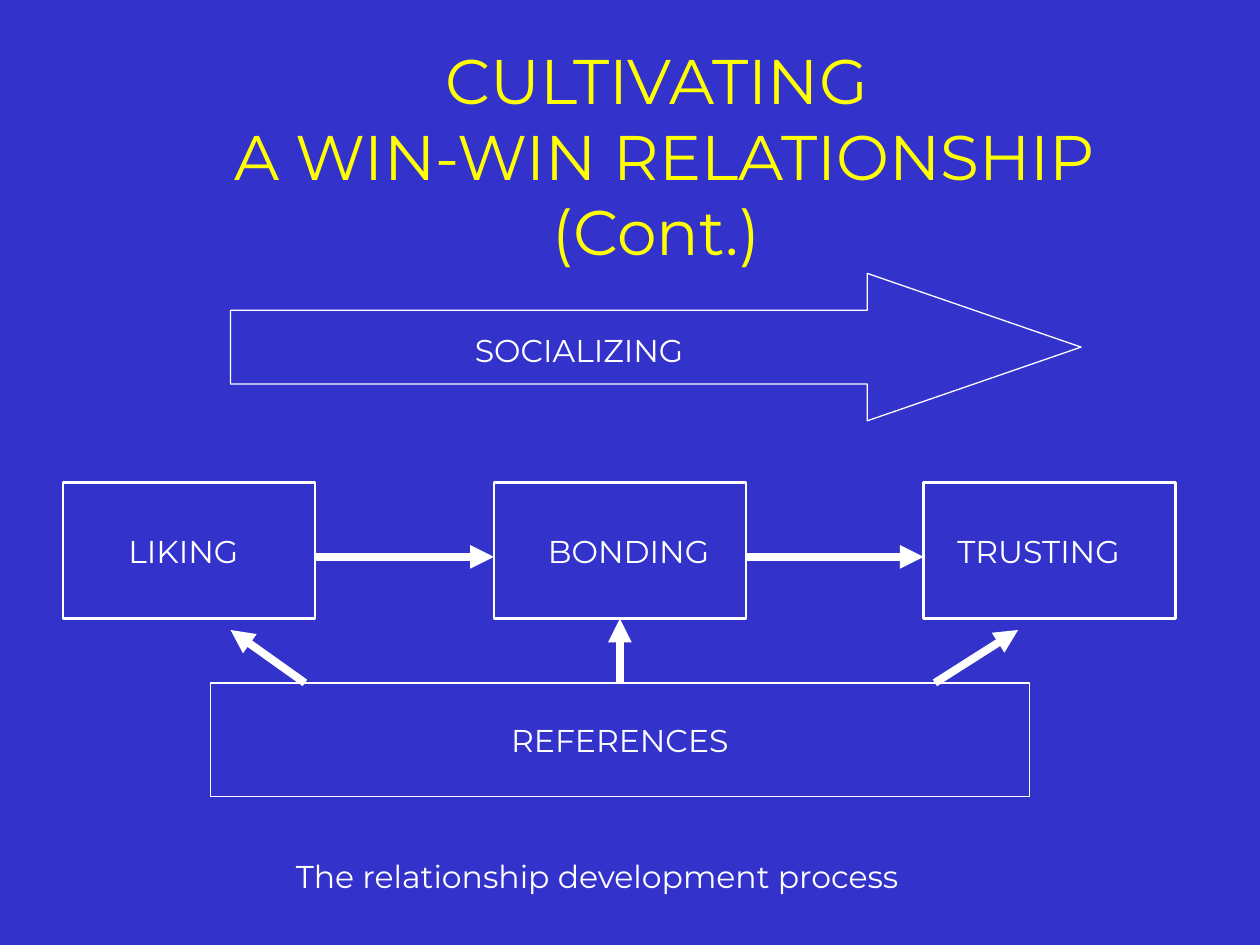
from dataclasses import dataclass

import pptx
import pptx.dml.color
import pptx.enum.shapes
import pptx.enum.text
import pptx.oxml
import pptx.oxml.ns
import pptx.util

Inches = pptx.util.Inches
Pt = pptx.util.Pt
SHAPES = pptx.enum.shapes.MSO_SHAPE
ALIGN = pptx.enum.text.PP_ALIGN
ANCHOR = pptx.enum.text.MSO_ANCHOR

FONT = "Montserrat"
BLUE, WHITE, YELLOW = "3333CC", "FFFFFF", "FFFF00"
STAGE_TOP, STAGE_WIDTH, STAGE_HEIGHT = 3.83, 2, 1.08
LABEL_TOP, LABEL_HEIGHT = 4.17, 0.4
FLOW_Y, REFERENCES_TOP = 4.42, 5.42


@dataclass
class Stage:
    label: str
    left: float
    label_left: float
    label_width: float


STAGES = [
    Stage("LIKING", 0.5, 0.92, 1.19),
    Stage("BONDING", 3.92, 4.25, 1.52),
    Stage("TRUSTING", 7.33, 7.5, 1.66),
]


def colour(value: str):
    return pptx.dml.color.RGBColor.from_string(value)


def write(frame, lines: list[str], size: float = 18, fill: str = WHITE,
          align=ALIGN.LEFT) -> None:
    for index, line in enumerate(lines):
        paragraph = frame.paragraphs[0] if index == 0 else frame.add_paragraph()
        paragraph.alignment = align
        run = paragraph.add_run()
        run.text = line
        run.font.name = FONT
        run.font.size = Pt(size)
        run.font.color.rgb = colour(fill)


def add_label(slide, text: str, left: float, top: float, width: float) -> None:
    box = slide.shapes.add_textbox(
        Inches(left), Inches(top), Inches(width), Inches(LABEL_HEIGHT))
    box.text_frame.word_wrap = True
    write(box.text_frame, [text])


def add_outline(slide, kind, left: float, top: float, width: float,
                height: float, weight: float):
    outline = slide.shapes.add_shape(
        kind, Inches(left), Inches(top), Inches(width), Inches(height))
    outline.shadow.inherit = False
    outline.fill.background()
    outline.line.color.rgb = colour(WHITE)
    outline.line.width = Pt(weight)
    return outline


def add_arrow(slide, start: tuple[float, float], end: tuple[float, float]):
    arrow = slide.shapes.add_connector(
        pptx.enum.shapes.MSO_CONNECTOR.STRAIGHT,
        *(Inches(value) for value in start + end))
    arrow.line.color.rgb = colour(WHITE)
    arrow.line.width = Pt(4.5)
    head = pptx.oxml.ns.qn("a:tailEnd")
    line = arrow.line._get_or_add_ln()
    line.append(line.makeelement(head, {"type": "triangle"}))
    properties = arrow._element.spPr
    properties.append(
        properties.makeelement(pptx.oxml.ns.qn("a:effectLst"), {}))
    return arrow


def main() -> None:
    deck = pptx.Presentation()
    deck.slide_width, deck.slide_height = Inches(10), Inches(7.5)
    slide = deck.slides.add_slide(deck.slide_layouts[6])
    slide.background.fill.solid()
    slide.background.fill.fore_color.rgb = colour(BLUE)

    # Title
    title = slide.shapes.add_textbox(
        Inches(1.34), Inches(0.28), Inches(7.74), Inches(1.42))
    title.text_frame.word_wrap = False
    write(title.text_frame, ["CULTIVATING", " A WIN-WIN RELATIONSHIP (Cont.)"],
          36, YELLOW, ALIGN.CENTER)

    # Stages and the flow between them
    stage_boxes = []
    for stage in STAGES:
        stage_boxes.append(add_outline(
            slide, SHAPES.RECTANGLE, stage.left, STAGE_TOP,
            STAGE_WIDTH, STAGE_HEIGHT, 1.5))
        add_label(slide, stage.label, stage.label_left, LABEL_TOP,
                  stage.label_width)
    for stage, following in zip(STAGES, STAGES[1:]):
        add_arrow(slide, (stage.left + STAGE_WIDTH, FLOW_Y),
                  (following.left, FLOW_Y))

    # Socializing arrow over all stages
    socializing = add_outline(
        slide, SHAPES.RIGHT_ARROW, 1.83, 2.17, 6.75, 1.17, 0.75)
    socializing.adjustments[0] = 0.5
    socializing.adjustments[1] = 1.45
    add_label(slide, "SOCIALIZING", 3.67, 2.58, 2.25)

    # References supporting every stage
    references = add_outline(
        slide, SHAPES.RECTANGLE, 1.67, REFERENCES_TOP, 6.5, 0.9, 0.75)
    references.text_frame.vertical_anchor = ANCHOR.MIDDLE
    write(references.text_frame, ["REFERENCES"], align=ALIGN.CENTER)
    support = add_arrow(slide, (4.92, REFERENCES_TOP), (4.92, 4.91))
    support.begin_connect(references, 0)
    support.end_connect(stage_boxes[1], 2)
    for start_x, end_x in [(7.42, 8.08), (2.42, 1.83)]:
        add_arrow(slide, (start_x, REFERENCES_TOP), (end_x, 5))

    # Caption
    add_label(slide, "The relationship development process", 2.25, 6.75, 5.83)

    deck.save("out.pptx")


if __name__ == "__main__":
    main()
